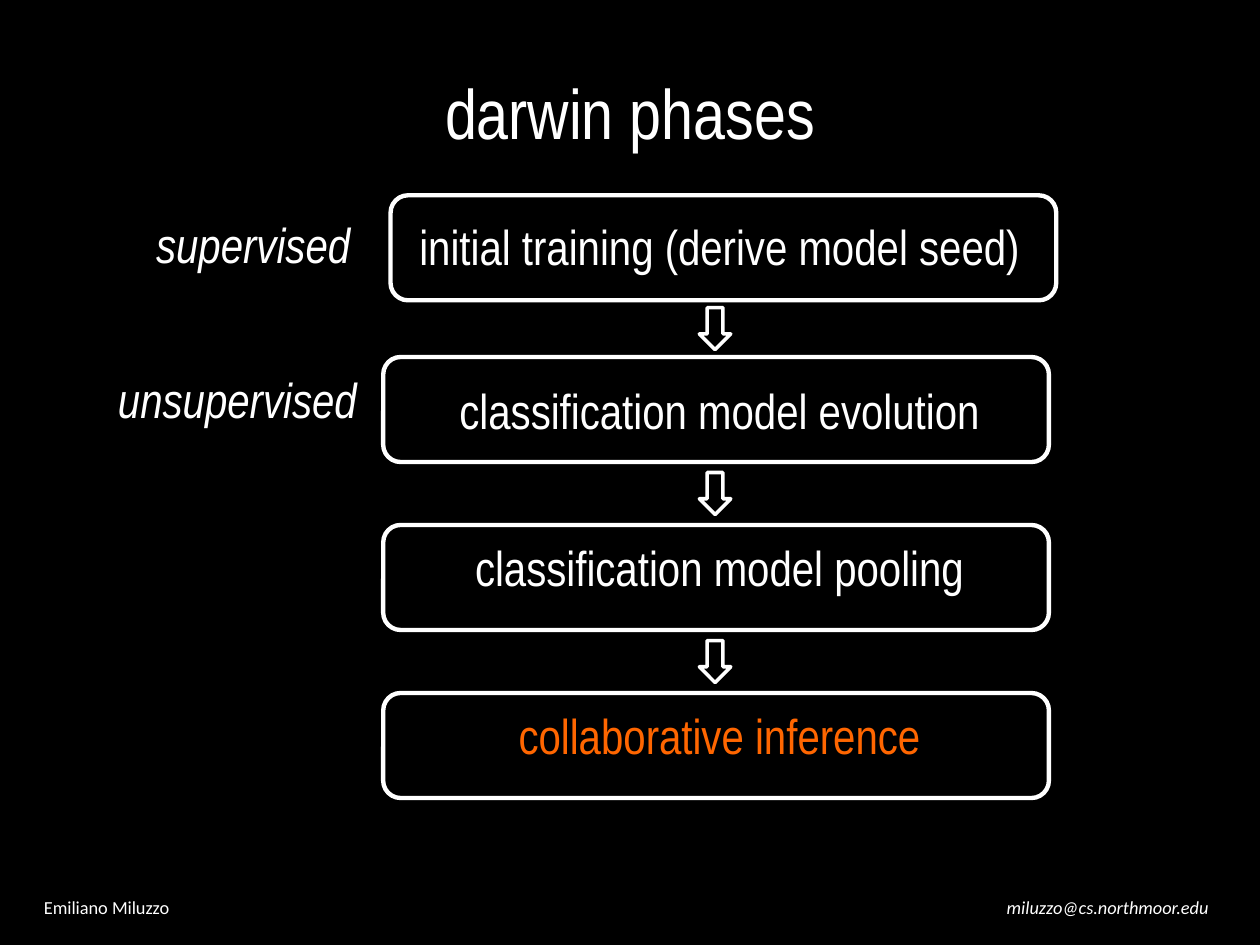
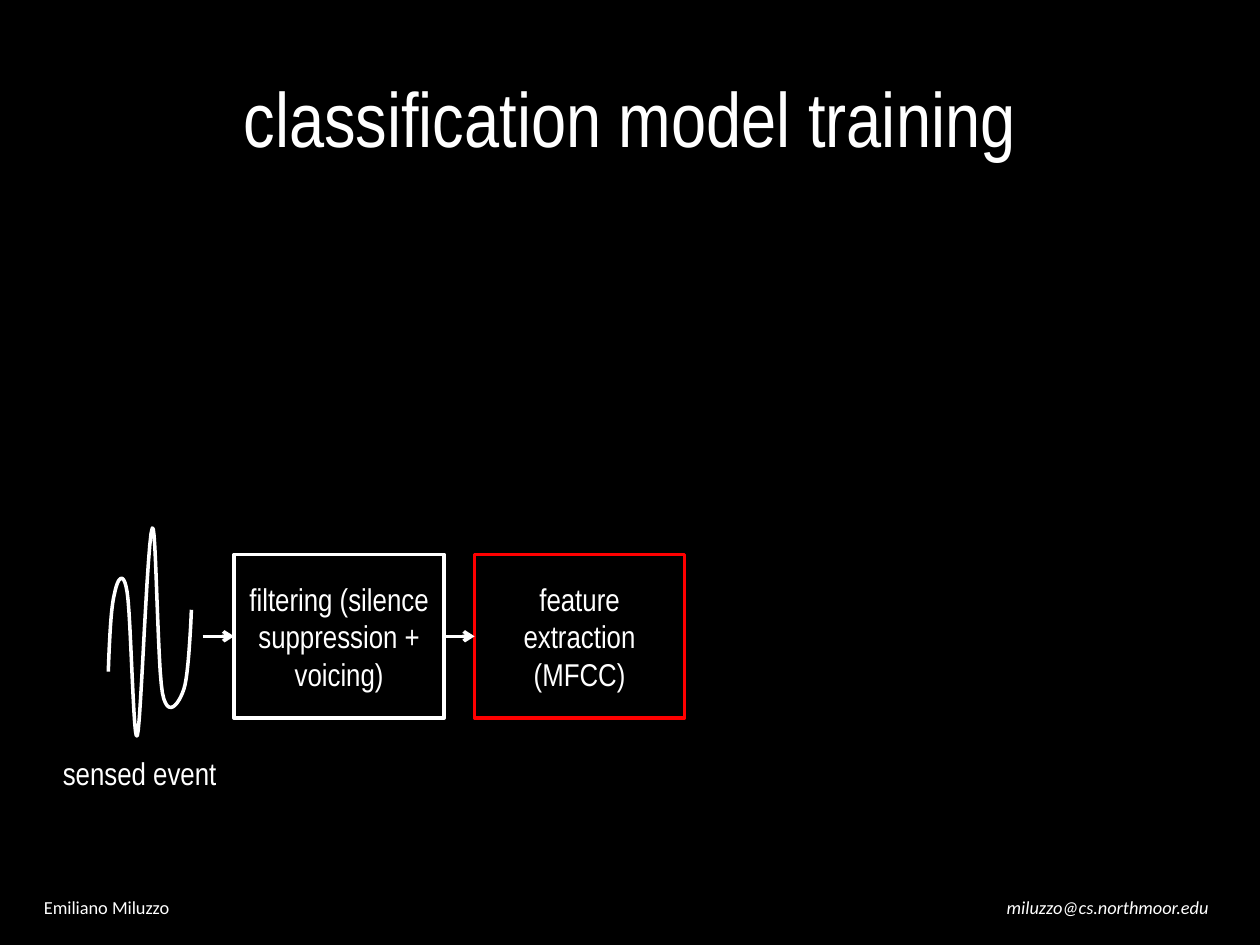
from dataclasses import dataclass
from itertools import pairwise

from lxml.etree import SubElement
from pptx import Presentation
from pptx.dml.color import RGBColor as Color
from pptx.enum.shapes import MSO_CONNECTOR as Connector, MSO_SHAPE as Preset
from pptx.enum.text import MSO_ANCHOR as Anchor, PP_ALIGN as Align
from pptx.oxml.ns import qn
from pptx.shapes.autoshape import Shape
from pptx.slide import Slide
from pptx.util import Inches, Pt

UNIT = Inches(1) // 12  # the slide is a grid of 120 columns by 90 rows
COLUMNS, ROWS = 120, 90
LEFT_SIDE, RIGHT_SIDE = 1, 3


@dataclass(frozen=True)
class Theme:
    background: Color = Color(0, 0, 0)
    ink: Color = Color(255, 255, 255)
    accent: Color = Color(0xFF, 0x66, 0)
    alert: Color = Color(255, 0, 0)
    font: str = "Arial Narrow"
    footer_font: str = "Calibri"
    title_size: float = 44
    small_title_size: float = 40
    phase_size: float = 28
    step_size: float = 18
    footer_size: float = 10.5
    frame_width: float = 2.5
    line_width: float = 2


THEME = Theme()


@dataclass(frozen=True)
class Area:
    column: float
    row: float
    columns: float
    rows: float

    def lengths(self) -> list[int]:
        return [grid(n) for n in (self.column, self.row, self.columns, self.rows)]


@dataclass(frozen=True)
class Style:
    size: float
    color: Color = THEME.ink
    font: str = THEME.font
    italic: bool = False
    align: Align = Align.CENTER


@dataclass(frozen=True)
class Phase:
    text: str
    text_area: Area
    frame_column: float
    frame_row: float
    color: Color = THEME.ink


@dataclass(frozen=True)
class Step:
    text: str
    column: float
    line_color: Color


PHASE_STYLE = Style(THEME.phase_size)
SIDE_STYLE = Style(THEME.phase_size, italic=True)
STEP_STYLE = Style(THEME.step_size)

PHASES = [
    Phase("initial training (derive model seed)", Area(36.5, 16.8, 64, 13.2), 37.2, 18.6),
    Phase("classification model evolution", Area(36.5, 31, 64, 16), 36.5, 34),
    Phase("classification model pooling", Area(36.5, 46, 64, 16), 36.5, 50),
    Phase("collaborative inference", Area(36.5, 62, 64, 16), 36.5, 66, THEME.accent),
]
STEPS = [
    Step("filtering (silence suppression + voicing)", 22.3, THEME.ink),
    Step("feature\nextraction\n(MFCC)", 45.2, THEME.alert),
]
# Bézier nodes in inches: start, then two handles and an end for each curve
WAVE = [
    (0.86, 5.33),
    (0.87, 5.08), (0.88, 4.82), (0.91, 4.71),
    (0.93, 4.6), (0.98, 4.51), (1.01, 4.7),
    (1.04, 4.89), (1.06, 5.93), (1.09, 5.84),
    (1.12, 5.76), (1.17, 4.25), (1.21, 4.19),
    (1.24, 4.13), (1.25, 5.29), (1.29, 5.5),
    (1.33, 5.71), (1.42, 5.59), (1.46, 5.47),
    (1.5, 5.36), (1.52, 4.84), (1.52, 4.84),
]


def grid(count: float) -> int:
    return round(count * UNIT)


def write(shape: Shape, text: str, style: Style, wrap: bool = True) -> None:
    frame = shape.text_frame
    frame.word_wrap = wrap
    frame.vertical_anchor = Anchor.MIDDLE
    frame.text = text
    for paragraph in frame.paragraphs:
        paragraph.alignment = style.align
        font = paragraph.font
        font.name, font.size = style.font, Pt(style.size)
        font.italic = style.italic
        font.color.rgb = style.color


def add_text(page: Slide, text: str, area: Area, style: Style, wrap: bool = True) -> None:
    write(page.shapes.add_textbox(*area.lengths()), text, style, wrap)


def outline(shape: Shape, color: Color, width: float) -> None:
    """Leave only a coloured outline, without fill or shadow."""
    shape.shadow.inherit = False
    shape.fill.background()
    shape.line.color.rgb = color
    shape.line.width = Pt(width)


def add_outlined(page: Slide, preset: Preset, area: Area,
                 color: Color = THEME.ink, width: float = THEME.line_width) -> Shape:
    shape = page.shapes.add_shape(preset, *area.lengths())
    outline(shape, color, width)
    return shape


def add_arrow(page: Slide, start: Shape | tuple[float, float], target: Shape) -> None:
    """Draw an arrow to the target's left side from a shape's right side or a grid point."""
    x, y = (0, 0) if isinstance(start, Shape) else map(grid, start)
    arrow = page.shapes.add_connector(Connector.STRAIGHT, x, y, x, y)
    if isinstance(start, Shape):
        arrow.begin_connect(start, RIGHT_SIDE)
    arrow.end_connect(target, LEFT_SIDE)
    arrow.line.color.rgb = THEME.ink
    arrow.line.width = Pt(THEME.line_width)
    properties = arrow.element.spPr
    SubElement(properties.find(qn("a:ln")), qn("a:tailEnd"), type="arrow")
    SubElement(properties, qn("a:effectLst"))


def add_wave(page: Slide, samples: int = 12) -> None:
    """Trace the Bézier nodes as one open outline."""
    points = []
    for first in range(0, len(WAVE) - 1, 3):
        nodes = WAVE[first:first + 4]
        for sample in range(1, samples + 1):
            t = sample / samples
            weights = ((1 - t) ** 3, 3 * t * (1 - t) ** 2, 3 * t * t * (1 - t), t ** 3)
            points.append(tuple(
                Inches(sum(w * node[axis] for w, node in zip(weights, nodes)))
                for axis in (0, 1)))
    builder = page.shapes.build_freeform(*map(Inches, WAVE[0]))
    builder.add_line_segments(points, close=False)
    outline(builder.convert_to_shape(), THEME.ink, THEME.line_width)


def add_page(deck, title: str, title_area: Area, title_size: float) -> Slide:
    """Add a blank page with the shared background, footers and title."""
    page = deck.slides.add_slide(deck.slide_layouts[6])
    page.background.fill.solid()
    page.background.fill.fore_color.rgb = THEME.background
    add_text(page, "miluzzo@cs.northmoor.edu", Area(83, 84, 45, 4.8),
             Style(THEME.footer_size, font=THEME.footer_font, italic=True))
    add_text(page, "Emiliano Miluzzo", Area(3, 84, 32, 4.8),
             Style(THEME.footer_size, font=THEME.footer_font, align=Align.LEFT))
    add_text(page, title, title_area, Style(title_size))
    return page


def build_phases(deck) -> None:
    page = add_page(deck, "darwin phases", Area(6, 6, 108, 9.2), THEME.small_title_size)
    for phase in PHASES:
        add_text(page, phase.text, phase.text_area, Style(THEME.phase_size, phase.color))
        add_outlined(page, Preset.ROUNDED_RECTANGLE,
                     Area(phase.frame_column, phase.frame_row, 63.4, 10),
                     width=THEME.frame_width)
    for upper, lower in pairwise(PHASES):
        middle = (upper.frame_row + 10 + lower.frame_row) / 2
        add_outlined(page, Preset.DOWN_ARROW, Area(66.6, middle - 2, 3, 4))
    add_text(page, "supervised", Area(9.5, 15.2, 29.2, 16), SIDE_STYLE)
    add_text(page, "unsupervised", Area(8, 30, 29.2, 16), SIDE_STYLE)


def build_training(deck) -> None:
    page = add_page(deck, "classification model training",
                    Area(6, 3.6, 108, 15), THEME.title_size)
    add_wave(page)
    add_text(page, "sensed event", Area(4.7, 71.2, 17.2, 4.8), STEP_STYLE, wrap=False)
    previous = (19.3, 60.6)
    for step in STEPS:
        box = add_outlined(page, Preset.RECTANGLE,
                           Area(step.column, 52.8, 20, 15.6), step.line_color)
        write(box, step.text, STEP_STYLE)
        add_arrow(page, previous, box)
        previous = box


def main() -> None:
    deck = Presentation()
    deck.slide_width, deck.slide_height = grid(COLUMNS), grid(ROWS)
    build_phases(deck)
    build_training(deck)
    deck.save("out.pptx")


if __name__ == "__main__":
    main()
